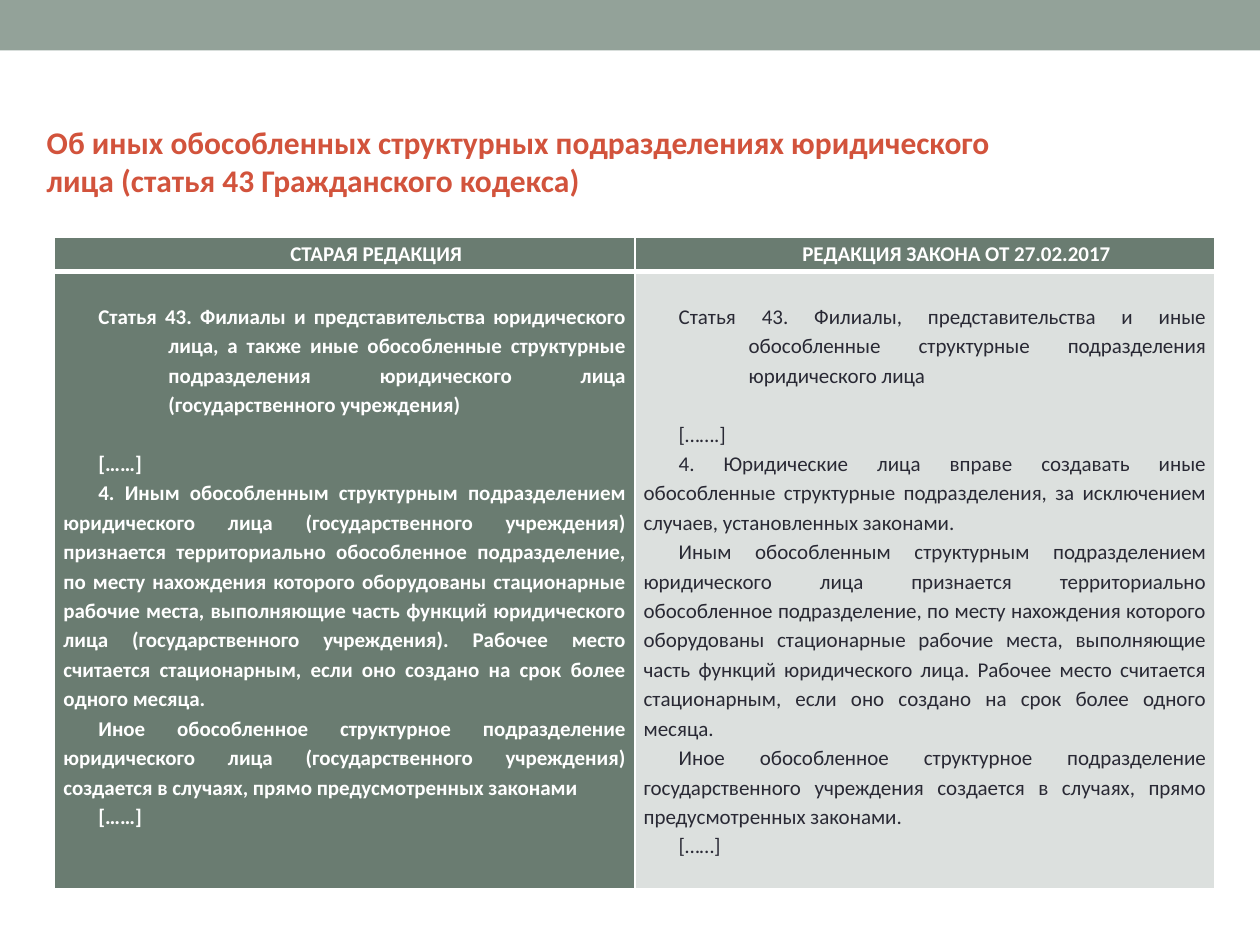
import dataclasses

import pptx
import pptx.dml.color
import pptx.enum.text
import pptx.oxml
import pptx.oxml.ns
import pptx.util

Pt = pptx.util.Pt
Align = pptx.enum.text.PP_ALIGN
Anchor = pptx.enum.text.MSO_ANCHOR


@dataclasses.dataclass(frozen=True)
class Theme:
    font: str = "Calibri"
    title_size: float = 18
    text_size: float = 12
    line_height: float = 16.8
    bar: str = "93A299"
    accent: str = "D2533C"
    dark: str = "6A7C71"
    pale: str = "DCE0DE"
    ink: str = "292934"
    white: str = "FFFFFF"


def rgb(value):
    return pptx.dml.color.RGBColor.from_string(value)


def apply(target, values):
    for name, value in values.items():
        setattr(target, name, value)


class PageBuilder:
    def __init__(self, page, theme):
        self.page = page
        self.theme = theme

    def bar(self, left, top, width, height):
        box = self.page.shapes.add_shape(1, Pt(left), Pt(top), Pt(width), Pt(height))
        box.shadow.inherit = False
        box.fill.solid()
        box.fill.fore_color.rgb = rgb(self.theme.bar)
        box.line.fill.background()

    def fill_para(self, para, text, size, color, bold, layout):
        apply(para, layout)
        span = para.add_run()
        span.text = text
        apply(span.font, {"name": self.theme.font, "size": Pt(size), "bold": bold})
        span.font.color.rgb = rgb(color)

    def title(self, text, left, top, width, height):
        box = self.page.shapes.title
        apply(box, {"left": Pt(left), "top": Pt(top), "width": Pt(width), "height": Pt(height)})
        apply(box.text_frame, {
            "word_wrap": True,
            "auto_size": pptx.enum.text.MSO_AUTO_SIZE.NONE,
            "vertical_anchor": Anchor.MIDDLE,
        })
        self.fill_para(box.text_frame.paragraphs[0], text, self.theme.title_size,
                       self.theme.accent, True, {"alignment": Align.LEFT})

    def indent(self, para, margin, first):
        properties = para._p.get_or_add_pPr()
        properties.set("marL", str(Pt(margin)))
        properties.set("indent", str(Pt(first)))

    def borders(self, cell, widths):
        properties = cell._tc.get_or_add_tcPr()
        for index, (side, width) in enumerate(widths.items()):
            line = pptx.oxml.parse_xml(
                f'<a:{side} {pptx.oxml.ns.nsdecls("a")} w="{Pt(width)}"><a:solidFill>'
                f'<a:srgbClr val="{self.theme.white}"/></a:solidFill></a:{side}>')
            properties.insert(index, line)

    def cell(self, cell, fill, top_margin, top_line, bottom_line):
        cell.fill.solid()
        cell.fill.fore_color.rgb = rgb(fill)
        apply(cell, {
            "margin_left": Pt(5), "margin_right": Pt(5),
            "margin_top": Pt(top_margin), "margin_bottom": Pt(0),
            "vertical_anchor": Anchor.TOP,
        })
        self.borders(cell, {"lnL": 1, "lnR": 1, "lnT": top_line, "lnB": bottom_line})

    def header_cell(self, cell, text):
        self.cell(cell, self.theme.dark, 0, 1, 3)
        para = cell.text_frame.paragraphs[0]
        self.fill_para(para, text, self.theme.text_size, self.theme.white, True,
                       {"alignment": Align.CENTER, "line_spacing": 1.15})
        self.indent(para, 36, 0)

    def body_cell(self, cell, texts, fill, color, bold):
        self.cell(cell, fill, self.theme.line_height, 3, 1)
        frame = cell.text_frame
        for index, text in enumerate(texts):
            heading = index == 0
            para = frame.paragraphs[0] if heading else frame.add_paragraph()
            gap = self.theme.line_height if heading else 0
            self.fill_para(para, text, self.theme.text_size, color, bold, {
                "alignment": Align.JUSTIFY, "line_spacing": 1.15,
                "space_before": Pt(0), "space_after": Pt(gap),
            })
            self.indent(para, *((60, -40) if heading else (0, 20)))

    def comparison(self, columns, left, top, width, heights):
        frame = self.page.shapes.add_table(
            2, len(columns), Pt(left), Pt(top), Pt(width), Pt(sum(heights)))
        table = frame.table
        table.horz_banding = False
        for row, height in zip(table.rows, heights):
            row.height = Pt(height)
        for index, (heading, texts, style) in enumerate(columns):
            table.columns[index].width = Pt(width / len(columns))
            self.header_cell(table.cell(0, index), heading)
            self.body_cell(table.cell(1, index), texts, *style)


OLD_TEXT = [
    "Статья 43. Филиалы и представительства юридического лица, а также иные обособленные "
    "структурные подразделения юридического лица (государственного учреждения)",
    "[……]",
    "4. Иным обособленным структурным подразделением юридического лица (государственного "
    "учреждения) признается территориально обособленное подразделение, по месту нахождения "
    "которого оборудованы стационарные рабочие места, выполняющие часть функций юридического "
    "лица (государственного учреждения). Рабочее место считается стационарным, если оно "
    "создано на срок более одного месяца.",
    "Иное обособленное структурное подразделение юридического лица (государственного "
    "учреждения) создается в случаях, прямо предусмотренных законами",
    "[……]",
]
NEW_TEXT = [
    "Статья 43. Филиалы, представительства и иные обособленные структурные подразделения "
    "юридического лица",
    "[…….]",
    "4. Юридические лица вправе создавать иные обособленные структурные подразделения, за "
    "исключением случаев, установленных законами.",
    "Иным обособленным структурным подразделением юридического лица признается "
    "территориально обособленное подразделение, по месту нахождения которого оборудованы "
    "стационарные рабочие места, выполняющие часть функций юридического лица. Рабочее место "
    "считается стационарным, если оно создано на срок более одного месяца.",
    "Иное обособленное структурное подразделение государственного учреждения создается в "
    "случаях, прямо предусмотренных законами.",
    "[……]",
]


def main():
    theme = Theme()
    deck = pptx.Presentation()
    apply(deck, {"slide_width": Pt(720), "slide_height": Pt(540)})
    builder = PageBuilder(deck.slides.add_slide(deck.slide_layouts[5]), theme)
    builder.bar(0, 0, 720, 28.8)
    builder.comparison([
        ("СТАРАЯ РЕДАКЦИЯ", OLD_TEXT, (theme.dark, theme.white, True)),
        ("РЕДАКЦИЯ ЗАКОНА ОТ 27.02.2017", NEW_TEXT, (theme.pale, theme.ink, False)),
    ], 31.2, 135.6, 663.2, (19.4, 352.8))
    builder.title("Об иных обособленных структурных подразделениях юридического лица "
                  "(статья 43 Гражданского кодекса)", 19.5, 66.5, 590, 51)
    deck.save("out.pptx")


if __name__ == "__main__":
    main()
